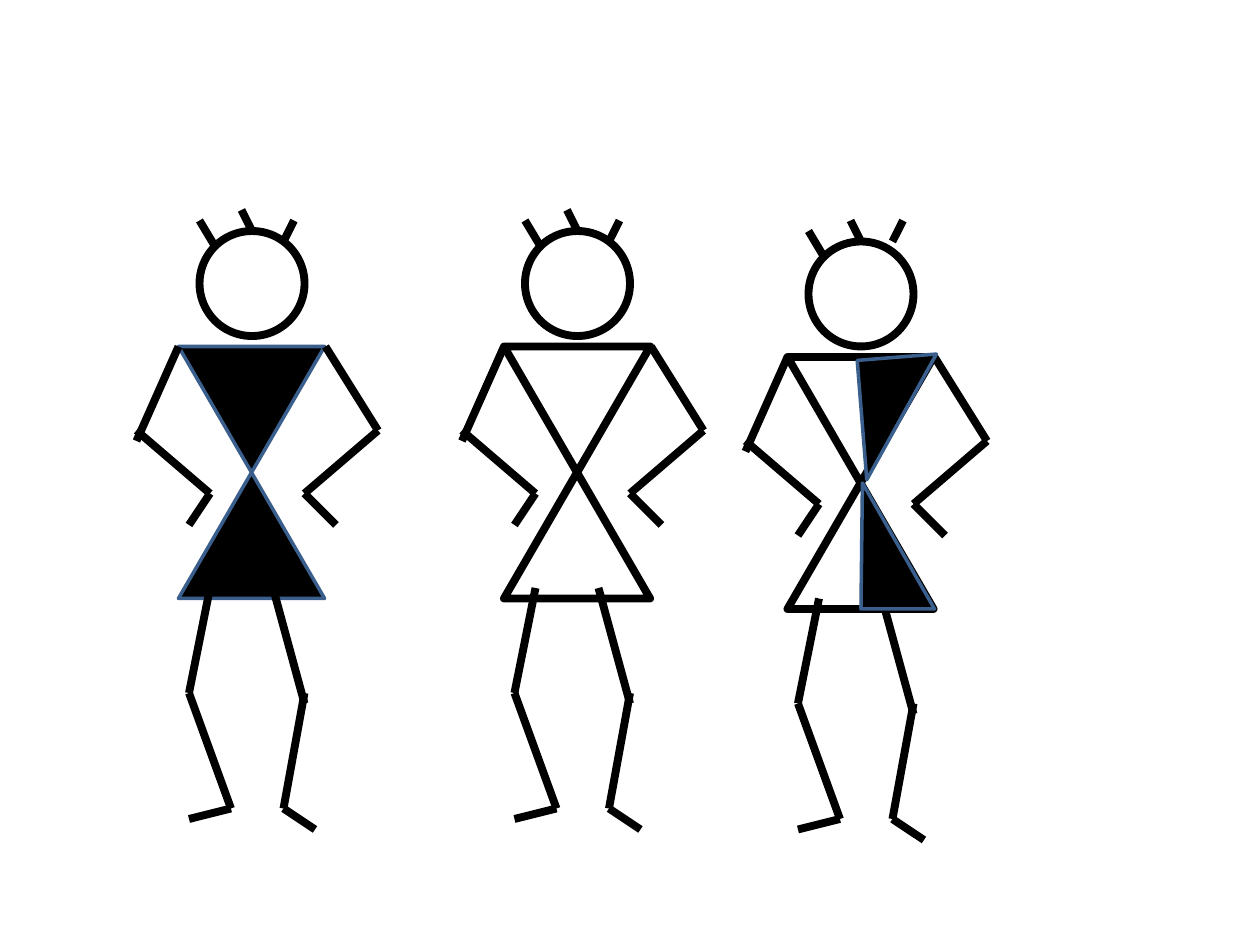
from dataclasses import dataclass

from lxml import etree
from pptx import Presentation
from pptx.dml.color import RGBColor
from pptx.enum import shapes as es
from pptx.oxml.ns import qn
from pptx.util import Pt

BLACK, WHITE, BLUE = "000000", "FFFFFF", "3A5F8C"
THICK, THIN = 4.5, 2
HEAD = 60
BODY_W, BODY_H = 83.5, 72
BODY_X, TORSO_Y, SKIRT_Y = -12, 66, 138

Line = tuple[float, float, float, float]

# Lines run x1, y1, x2, y2 from the top left of the head.
LIMBS: list[Line] = [
    # left arm and hand
    (-12, 66, -36, 120), (6, 150, -36, 114), (6, 150, -6, 168),
    # right arm and hand
    (72, 66, 102, 114), (60, 150, 102, 114), (60, 150, 78, 168),
    # left leg and foot
    (-6, 264, 18, 330), (6, 204, -6, 264), (18, 330, -6, 336),
    # right leg and foot
    (60, 264, 48, 330), (42, 204, 60, 270), (66, 342, 48, 330),
]
LEFT_HAIRS: list[Line] = [(9, 9, 0, -6), (30, 0, 24, -12)]
RIGHT_HAIR: Line = (48, 6, 54, -6)


@dataclass
class Triangle:
    x: float
    y: float
    w: float
    h: float
    fill: str
    line: str
    weight: float
    rotation: float = 0
    apex: float = 0.5


@dataclass
class Figure:
    x: float
    y: float
    fill: str
    line: str
    weight: float
    hair_lift: float = 0
    overlays: tuple[Triangle, ...] = ()


FIGURES = [
    Figure(114, 132, BLACK, BLUE, THIN),
    Figure(300, 132, WHITE, BLACK, THICK),
    Figure(462, 138, WHITE, BLACK, THICK, hair_lift=6, overlays=(
        Triangle(30, SKIRT_Y, 42, BODY_H, BLACK, BLUE, THIN, apex=0.02),
        Triangle(30.5, TORSO_Y, 45.4, 68.4, BLACK, BLUE, THIN, 175.4, apex=1),
    )),
]


def rgb(color: str) -> RGBColor:
    return RGBColor.from_string(color)


def add_preset(shapes, kind, x: float, y: float, w: float, h: float,
               fill: str, line: str, weight: float):
    sp = shapes.add_shape(kind, Pt(x), Pt(y), Pt(w), Pt(h))
    sp.shadow.inherit = False
    sp.fill.solid()
    sp.fill.fore_color.rgb = rgb(fill)
    sp.line.color.rgb = rgb(line)
    sp.line.width = Pt(weight)
    return sp


def add_triangle(shapes, fig: Figure, t: Triangle) -> None:
    sp = add_preset(shapes, es.MSO_SHAPE.ISOSCELES_TRIANGLE, fig.x + t.x,
                    fig.y + t.y, t.w, t.h, t.fill, t.line, t.weight)
    sp.rotation = t.rotation
    sp.adjustments[0] = t.apex


def add_line(shapes, fig: Figure, line: Line) -> None:
    x1, y1, x2, y2 = line
    c = shapes.add_connector(es.MSO_CONNECTOR.STRAIGHT,
                             Pt(fig.x + x1), Pt(fig.y + y1),
                             Pt(fig.x + x2), Pt(fig.y + y2))
    c.line.color.rgb = rgb(BLACK)
    c.line.width = Pt(THICK)
    etree.SubElement(c._element.spPr, qn("a:effectLst"))


def add_figure(slide, fig: Figure) -> None:
    shapes = slide.shapes.add_group_shape().shapes
    add_preset(shapes, es.MSO_SHAPE.OVAL, fig.x, fig.y, HEAD, HEAD,
               WHITE, BLACK, THICK)
    for y, rotation in ((SKIRT_Y, 0), (TORSO_Y, 180)):
        add_triangle(shapes, fig, Triangle(BODY_X, y, BODY_W, BODY_H, fig.fill,
                                           fig.line, fig.weight, rotation))
    for limb in LIMBS:
        add_line(shapes, fig, limb)
    for overlay in fig.overlays:
        add_triangle(shapes, fig, overlay)
    x1, y1, x2, y2 = RIGHT_HAIR
    lifted = (x1, y1 - fig.hair_lift, x2, y2 - fig.hair_lift)
    for hair in [*LEFT_HAIRS, lifted]:
        add_line(shapes, fig, hair)


def main() -> None:
    prs = Presentation()
    prs.slide_width, prs.slide_height = Pt(720), Pt(540)
    slide = prs.slides.add_slide(prs.slide_layouts[6])
    for fig in FIGURES:
        add_figure(slide, fig)
    prs.save("out.pptx")


if __name__ == "__main__":
    main()
